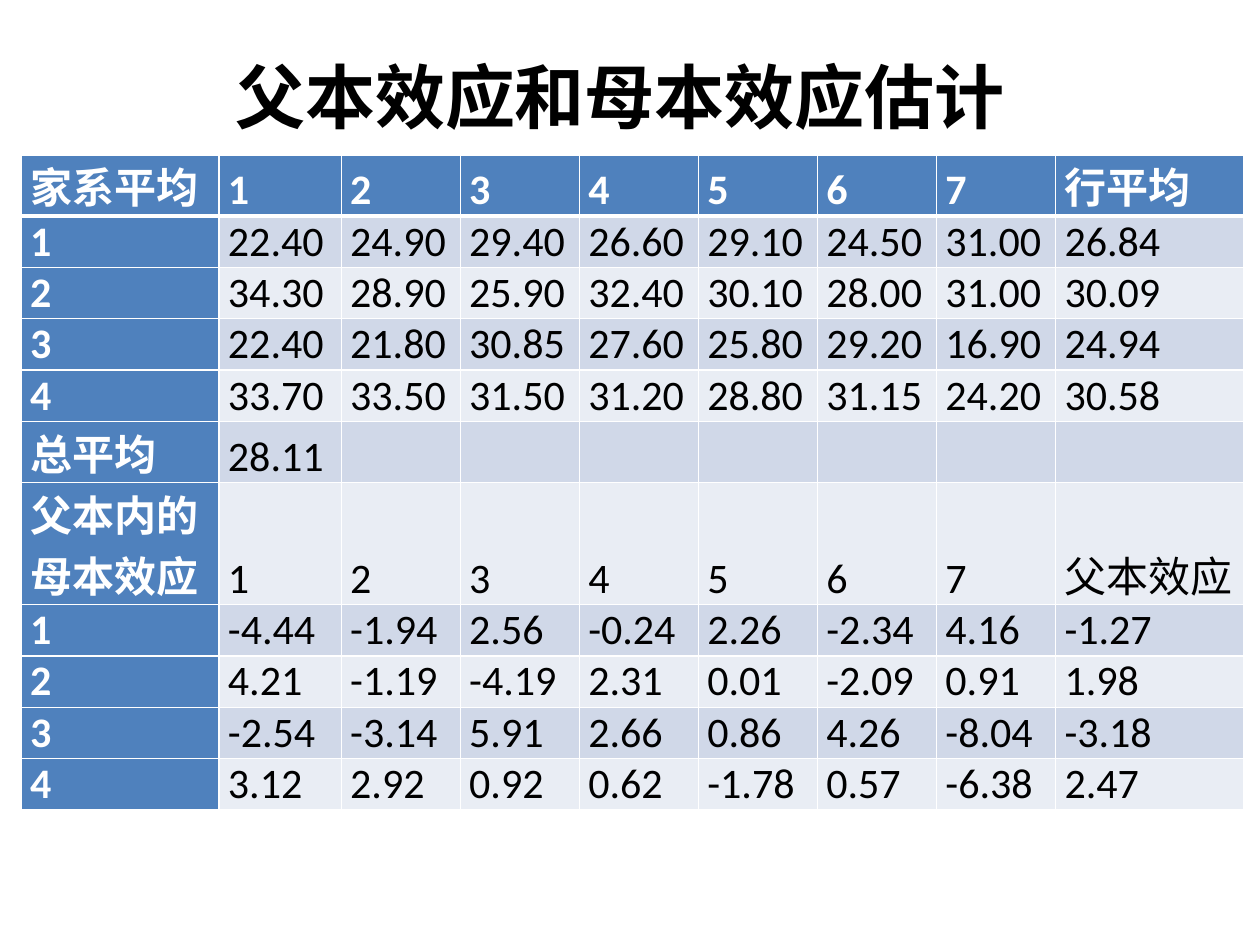
from lxml.etree import SubElement
from pptx import Presentation
from pptx.dml.color import RGBColor
from pptx.enum.text import MSO_ANCHOR, PP_ALIGN
from pptx.oxml.ns import qn
from pptx.util import Inches, Pt

HUES = {"head": "4F81BD", "odd": "D0D8E8", "even": "E9EDF4",
        "white": "FFFFFF", "black": "000000"}
ROWS = """家系平均 1 2 3 4 5 6 7 行平均
1 22.40 24.90 29.40 26.60 29.10 24.50 31.00 26.84
2 34.30 28.90 25.90 32.40 30.10 28.00 31.00 30.09
3 22.40 21.80 30.85 27.60 25.80 29.20 16.90 24.94
4 33.70 33.50 31.50 31.20 28.80 31.15 24.20 30.58
总平均 28.11
父本内的母本效应 1 2 3 4 5 6 7 父本效应
1 -4.44 -1.94 2.56 -0.24 2.26 -2.34 4.16 -1.27
2 4.21 -1.19 -4.19 2.31 0.01 -2.09 0.91 1.98
3 -2.54 -3.14 5.91 2.66 0.86 4.26 -8.04 -3.18
4 3.12 2.92 0.92 0.62 -1.78 0.57 -6.38 2.47"""
WIDTHS = [1.57, 0.97] + [5.67 / 6] * 6 + [1.49]
# Height of a two-line heading; a one-line heading takes half of it
TALL = 0.97
BLOCK = [3.26 / 8] * 4
HEIGHTS = [TALL / 2] + BLOCK + [TALL / 2, TALL] + BLOCK
CELL = {"margin_left": Inches(0.07), "margin_right": Inches(0.07),
        "margin_top": 0, "margin_bottom": 0,
        "vertical_anchor": MSO_ANCHOR.BOTTOM}


def style(font, hue, **form):
    for key, val in form.items():
        setattr(font, key, val)
    font.color.rgb = RGBColor.from_string(HUES[hue])


def edge(cell, side, width):
    """Draw one white border of a cell, with its width in points."""
    line = SubElement(cell._tc.get_or_add_tcPr(), qn("a:ln" + side),
                      w=str(Pt(width)))
    fill = SubElement(line, qn("a:solidFill"))
    SubElement(fill, qn("a:srgbClr"), val=HUES["white"])


deck = Presentation()
deck.slide_width, deck.slide_height = Inches(10), Inches(7.5)
slide = deck.slides.add_slide(deck.slide_layouts[6])

# Title
box = slide.shapes.add_textbox(Inches(1.3), Inches(0.44), Inches(7.24), Inches(0.63))
frame = box.text_frame
frame.word_wrap = True
frame.vertical_anchor = MSO_ANCHOR.MIDDLE
para = frame.paragraphs[0]
para.alignment = PP_ALIGN.CENTER
run = para.add_run()
run.text = "父本效应和母本效应估计"
style(run.font, "black", name="Times New Roman", size=Pt(40), bold=True)

# Table
rows = [line.split() for line in ROWS.splitlines()]
grid = slide.shapes.add_table(len(rows), len(WIDTHS), Inches(0.17), Inches(1.23),
                              Inches(sum(WIDTHS)), Inches(sum(HEIGHTS)))
table = grid.table
for col, width in zip(table.columns, WIDTHS):
    col.width = Inches(width)
for line, height in zip(table.rows, HEIGHTS):
    line.height = Inches(height)

for r, row in enumerate(rows):
    for c in range(len(WIDTHS)):
        cell = table.cell(r, c)
        for key, val in CELL.items():
            setattr(cell, key, val)
        for side in "LRTB":
            thick = (r, side) in [(0, "B"), (1, "T")]
            edge(cell, side, 3 if thick else 1)
        head = r == 0 or c == 0
        hue = "head" if head else "odd" if r % 2 else "even"
        cell.fill.solid()
        cell.fill.fore_color.rgb = RGBColor.from_string(HUES[hue])
        if c < len(row):
            run = cell.text_frame.paragraphs[0].add_run()
            run.text = row[c]
            style(run.font, "white" if head else "black",
                  name="Calibri", size=Pt(24), bold=head)

deck.save("out.pptx")
